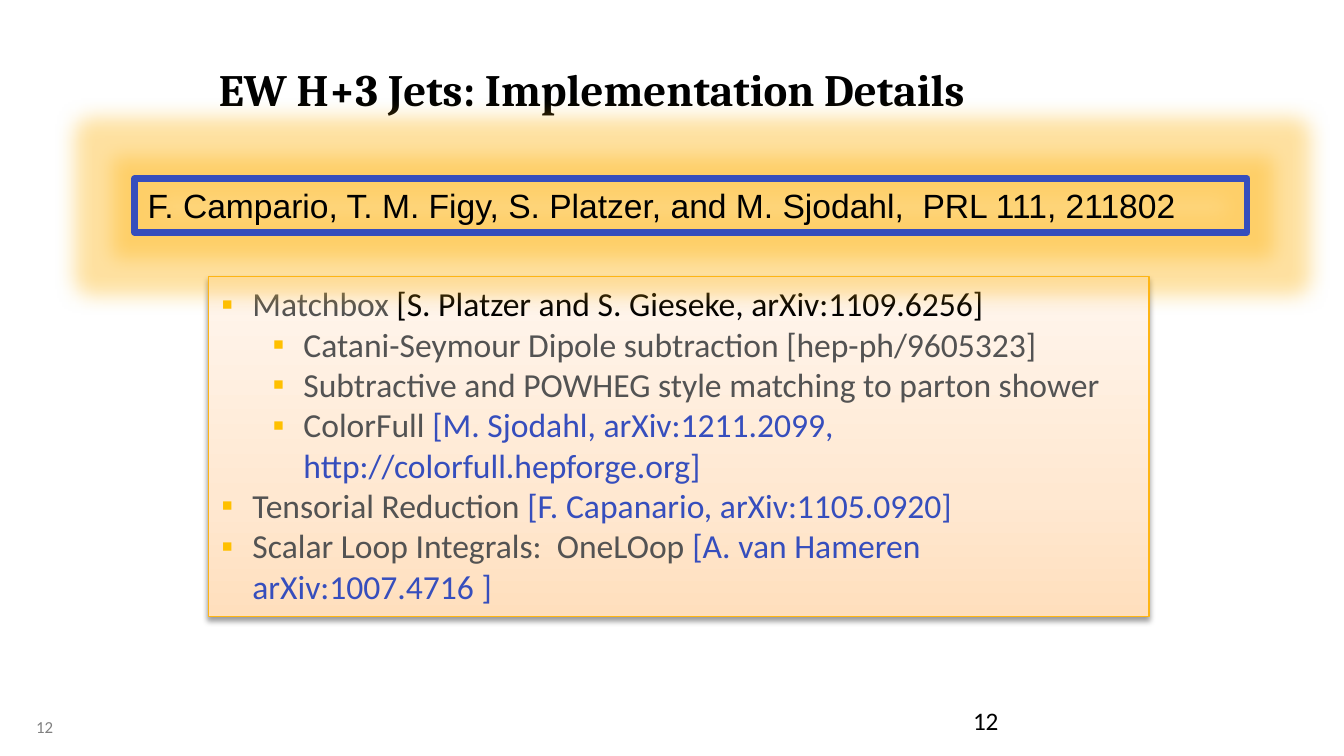
from lxml import etree
from pptx import Presentation
from pptx import util as u
from pptx.dml.color import RGBColor
from pptx.enum import shapes, text
from pptx.oxml import ns

BLACK = RGBColor(0, 0, 0)
GREY = RGBColor(0x80, 0x80, 0x80)
DARK = RGBColor(0x53, 0x53, 0x53)
BLUE = RGBColor(0x36, 0x4E, 0xBD)
GOLD = RGBColor(0xFE, 0xB5, 0x14)
AMBER = RGBColor(0xFF, 0xC0, 0x00)
FADE = [(0, "FFDFBD"), (35, "FFE8D1"), (100, "FFF6EE")]


def add(node, tag, **attrs):
    item = etree.SubElement(node, ns.qn(tag))
    for key, val in attrs.items():
        item.set(key, str(val))
    return item


def tint(node, color, alpha):
    clr = add(node, "a:srgbClr", val=color)
    add(clr, "a:alpha", val=alpha * 1000)


class Deck:
    font = "Calibri"
    size = 18

    def __init__(self, wide):
        self.prs = Presentation()
        self.prs.slide_width = u.Inches(wide)
        self.prs.slide_height = u.Inches(wide * 9 / 16)
        self.slide = self.prs.slides.add_slide(self.prs.slide_layouts[6])

    def frame(self, shape, anchor=text.MSO_ANCHOR.TOP, inset=(0.1, 0.05)):
        tf = shape.text_frame
        tf.word_wrap = True
        tf.vertical_anchor = anchor
        tf.margin_left = tf.margin_right = u.Inches(inset[0])
        tf.margin_top = tf.margin_bottom = u.Inches(inset[1])
        return tf

    def run(self, para, words, color, size=None, font=None, bold=False):
        run = para.add_run()
        run.text = words
        run.font.name = font or self.font
        run.font.size = u.Pt(size or self.size)
        run.font.bold = bold
        run.font.color.rgb = color

    def label(self, box, words, color, size, font=None, bold=False, **opts):
        shape = self.slide.shapes.add_textbox(*map(u.Inches, box))
        para = self.frame(shape, **opts).paragraphs[0]
        self.run(para, words, color, size, font, bold)

    def rect(self, box, line, width):
        shape = self.slide.shapes.add_shape(
            shapes.MSO_SHAPE.RECTANGLE, *map(u.Inches, box))
        shape.fill.background()
        shape.line.color.rgb = line
        shape.line.width = u.Pt(width)
        shape.shadow.inherit = False
        return shape

    def fade(self, shape, stops):
        shape.fill.gradient()
        grad = shape._element.spPr.find(ns.qn("a:gradFill"))
        for child in list(grad):
            grad.remove(child)
        group = add(grad, "a:gsLst")
        for pos, color in stops:
            add(add(group, "a:gs", pos=pos * 1000), "a:srgbClr", val=color)
        add(grad, "a:lin", ang=270 * 60000, scaled=0)

    def effect(self, shape, tag, color, alpha, **attrs):
        group = shape._element.spPr.find(ns.qn("a:effectLst"))
        tint(add(group, tag, **attrs), color, alpha)

    def bullet(self, para, level):
        para.alignment = text.PP_ALIGN.LEFT
        para.level = level
        props = para._p.get_or_add_pPr()
        props.set("marL", str(u.Inches(0.23 + 0.38 * level)))
        props.set("indent", str(u.Inches(-0.23)))
        add(add(props, "a:buClr"), "a:srgbClr", val=AMBER)
        add(props, "a:buFont", typeface="Arial")
        add(props, "a:buChar", char="▪")

    def bullets(self, shape, items):
        tf = self.frame(shape)
        for num, (level, runs) in enumerate(items):
            para = tf.add_paragraph() if num else tf.paragraphs[0]
            self.bullet(para, level)
            for words, color in runs:
                self.run(para, words, color)


def main():
    deck = Deck(10)

    # Title and page numbers
    deck.label((0.17, 5.28, 0.92, 0.41), "12", GREY, 9)
    deck.label((1.53, 0.22, 6.97, 0.69), "EW H+3 Jets: Implementation Details",
               BLACK, 24, "Cambria", True, anchor=text.MSO_ANCHOR.BOTTOM)
    deck.label((7.17, 5.21, 2.33, 0.3), "12", BLACK, 13.5, inset=(0.07, 0.04))

    # Details panel
    panel = deck.rect((1.55, 2.06, 7, 2.53), GOLD, 0.75)
    deck.fade(panel, FADE)
    deck.effect(panel, "a:outerShdw", BLACK, 38, blurRad=u.Pt(3.1),
                dist=u.Pt(1.6), dir=90 * 60000, rotWithShape=0)
    deck.bullets(panel, [
        (0, [("Matchbox ", DARK),
             ("[S. Platzer and S. Gieseke, arXiv:1109.6256]", BLACK)]),
        (1, [("Catani-Seymour Dipole subtraction [hep-ph/9605323]", DARK)]),
        (1, [("Subtractive and POWHEG style matching to parton shower", DARK)]),
        (1, [("ColorFull ", DARK),
             ("[M. Sjodahl, arXiv:1211.2099, http://colorfull.hepforge.org] ",
              BLUE)]),
        (0, [("Tensorial Reduction ", DARK),
             ("[F. Capanario, arXiv:1105.0920]", BLUE)]),
        (0, [("Scalar Loop Integrals:  OneLOop ", DARK),
             ("[A. van Hameren arXiv:1007.4716 ]", BLUE)]),
    ])

    # Glowing citation
    cite = deck.rect((1, 1.33, 8.28, 0.4), BLUE, 3.5)
    add(cite.line._ln, "a:round")
    deck.effect(cite, "a:glow", GOLD, 40, rad=u.Inches(0.31))
    para = deck.frame(cite).paragraphs[0]
    para.alignment = text.PP_ALIGN.LEFT
    deck.run(para, "F. Campario, T. M. Figy, S. Platzer, and M. Sjodahl,  "
             "PRL 111, 211802", BLACK, font="Arial")

    deck.prs.save("out.pptx")


if __name__ == "__main__":
    main()
